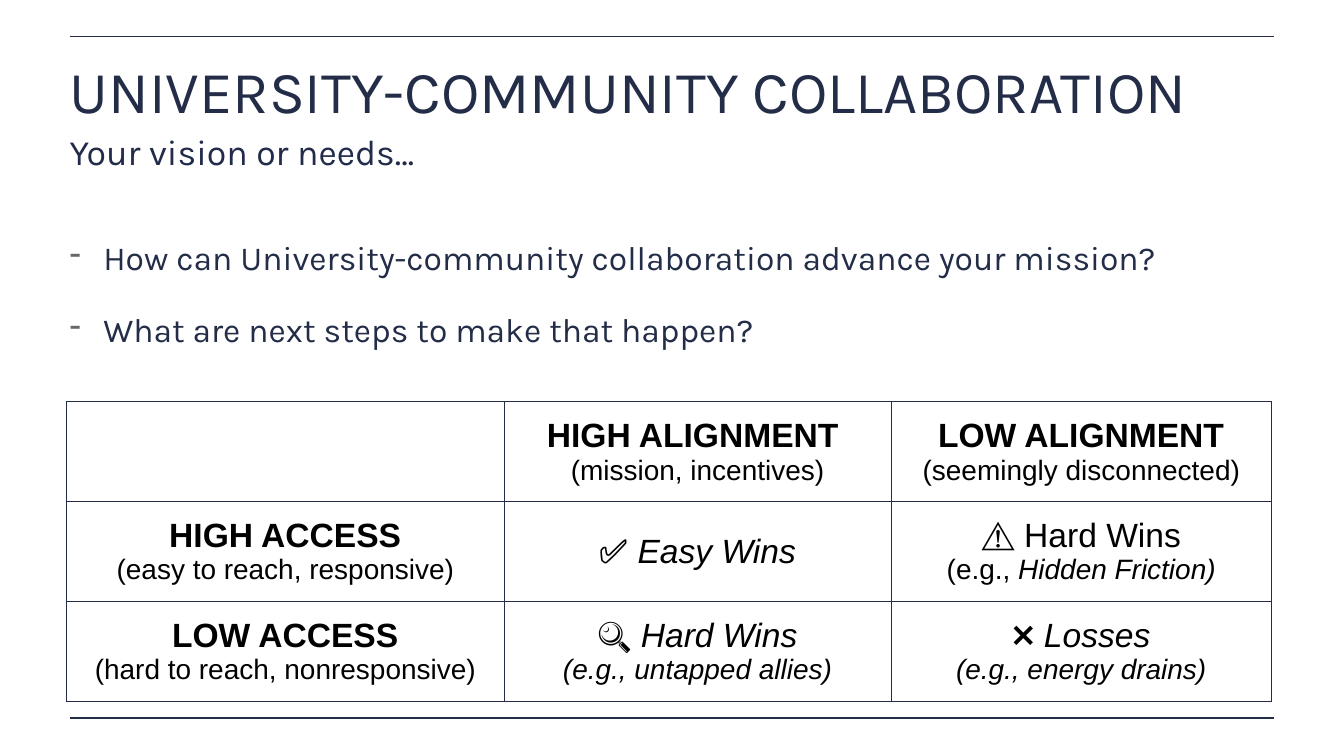
import pptx
import pptx.dml.color
import pptx.enum.shapes
import pptx.enum.text
import pptx.oxml.ns
import pptx.util
from lxml import etree

PX = 9144  # EMU in one px, 100 px to the inch
NAVY = pptx.dml.color.RGBColor(0x23, 0x2D, 0x48)
INK = pptx.dml.color.RGBColor(0x22, 0x2C, 0x4A)
GRAY = pptx.dml.color.RGBColor(0x66, 0x66, 0x66)
BLACK = pptx.dml.color.RGBColor(0, 0, 0)
qn = pptx.oxml.ns.qn


def add_box(left, top, width, height):
    box = slide.shapes.add_textbox(left * PX, top * PX, width * PX, height * PX)
    frame = box.text_frame
    frame.word_wrap = True
    frame.margin_left = frame.margin_right = 6 * PX
    frame.margin_top = frame.margin_bottom = 6 * PX
    return frame


def add_span(para, text, size, font, color, bold=False, italic=False):
    span = para.add_run()
    span.text = text
    span.font.size = pptx.util.Pt(size)
    span.font.name = font
    span.font.color.rgb = color
    span.font.bold = bold
    span.font.italic = italic


deck = pptx.Presentation()
deck.slide_width = 2667 * PX
deck.slide_height = 1500 * PX
slide = deck.slides.add_slide(deck.slide_layouts[6])

# Rules at the top and bottom
for y in (72, 1425):
    rule = slide.shapes.add_connector(
        pptx.enum.shapes.MSO_CONNECTOR.STRAIGHT, 138 * PX, y * PX, 2529 * PX, y * PX)
    rule.line.color.rgb = NAVY
    rule.line.width = pptx.util.Pt(2)
    etree.SubElement(rule._element.spPr, qn("a:effectLst"))

# Title and subtitle
headings = [
    (129, 2391, 165, "UNIVERSITY-COMMUNITY COLLABORATION", 85, NAVY),
    (268, 2403, 87, "Your vision or needs…", 50.9, INK),
]
for top, width, height, text, size, color in headings:
    para = add_box(132, top, width, height).paragraphs[0]
    para.line_spacing = 0.8
    add_span(para, text, size, "Karla", color)

# Questions
questions = [
    "How can University-community collaboration advance your mission?",
    "What are next steps to make that happen?",
]
frame = add_box(132, 465, 2403, 903)
for index, text in enumerate(questions):
    para = frame.add_paragraph() if index else frame.paragraphs[0]
    props = para._p.get_or_add_pPr()
    props.set("marL", str(67 * PX))
    props.set("indent", str(-67 * PX))
    bullet_color = etree.SubElement(props, qn("a:buClr"))
    etree.SubElement(bullet_color, qn("a:srgbClr"), val=str(GRAY))
    etree.SubElement(props, qn("a:buChar"), char="-")
    if index:
        para.space_before = pptx.util.Pt(45)
    add_span(para, text, 48, "Karla", NAVY)

# Access and alignment table: each cell is lines of (text, style) spans
cells = [
    [[],
     [[("HIGH ALIGNMENT ", "b")], [("(mission, incentives)", "")]],
     [[("LOW ALIGNMENT", "b")], [("(seemingly disconnected)", "")]]],
    [[[("HIGH ACCESS", "b")], [("(easy to reach, responsive)", "")]],
     [[("✅ ", ""), ("Easy Wins", "i")]],
     [[("⚠️ Hard Wins", "")], [("(e.g., ", ""), ("Hidden Friction)", "i")]]],
    [[[("LOW ACCESS", "b")], [("(hard to reach, nonresponsive)", "")]],
     [[("🔍 ", ""), ("Hard Wins", "i")], [("(e.g., untapped allies)", "i")]],
     [[("❌ ", ""), ("Losses", "i")], [("(e.g., energy drains)", "i")]]],
]
widths = [868, 768, 755]
row_height = 198
table = slide.shapes.add_table(
    len(cells), len(widths), 132 * PX, 797 * PX,
    sum(widths) * PX, len(cells) * row_height * PX).table
table.first_row = False
table.horz_banding = False
for column, width in zip(table.columns, widths):
    column.width = width * PX
for r, row in enumerate(cells):
    table.rows[r].height = row_height * PX
    for c, lines in enumerate(row):
        cell = table.cell(r, c)
        cell.vertical_anchor = pptx.enum.text.MSO_ANCHOR.MIDDLE
        props = cell._tc.get_or_add_tcPr()
        for side in ("a:lnL", "a:lnR", "a:lnT", "a:lnB"):
            border = etree.SubElement(props, qn(side), w=str(pptx.util.Pt(1)))
            fill = etree.SubElement(border, qn("a:solidFill"))
            etree.SubElement(fill, qn("a:srgbClr"), val=str(INK))
        cell.fill.background()
        for index, spans in enumerate(lines):
            frame = cell.text_frame
            para = frame.add_paragraph() if index else frame.paragraphs[0]
            para.alignment = pptx.enum.text.PP_ALIGN.CENTER
            for text, style in spans:
                add_span(para, text, 40 if index else 48, "Arial", BLACK,
                         bold=style == "b", italic=style == "i")

deck.save("out.pptx")
